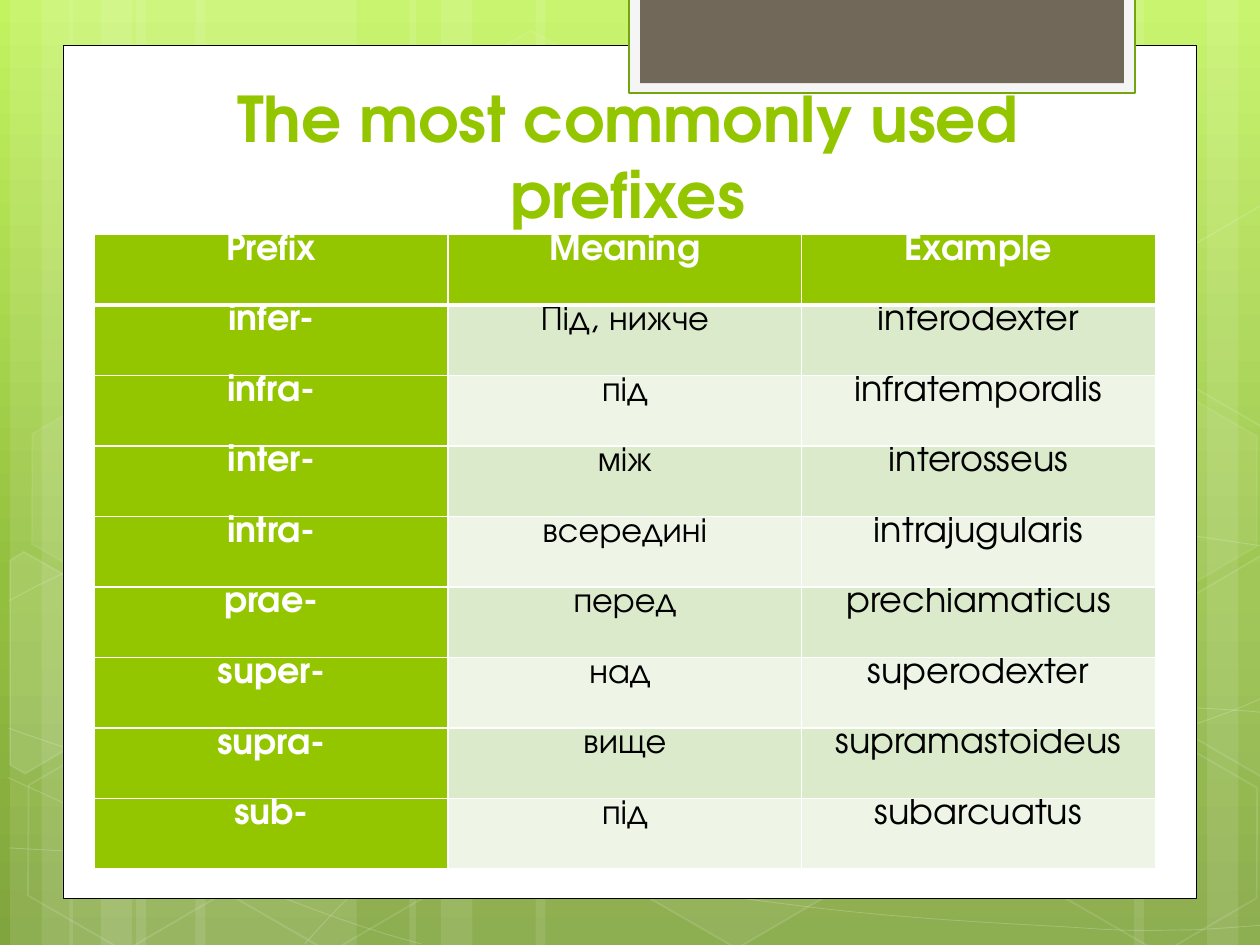
"""Build the slide that lists commonly used Latin prefixes."""
from copy import deepcopy
from dataclasses import dataclass
from typing import Optional

from lxml import etree
from pptx import Presentation
from pptx.dml.color import RGBColor
from pptx.enum.shapes import MSO_SHAPE
from pptx.enum.text import MSO_ANCHOR, PP_ALIGN
from pptx.oxml.ns import qn
from pptx.util import Inches, Pt

RECTANGLE, HEXAGON = MSO_SHAPE.RECTANGLE, MSO_SHAPE.HEXAGON
CENTER, BOTTOM, TOP = PP_ALIGN.CENTER, MSO_ANCHOR.BOTTOM, MSO_ANCHOR.TOP


@dataclass(frozen=True)
class Theme:
    font: str = "TeX Gyre Adventor"
    title_size: float = 36
    table_size: float = 20
    table_spacing: float = 18.5
    accent: str = "94C600"
    white: str = "FFFFFF"
    black: str = "000000"
    bands: tuple = ("DCEACC", "EEF5E7")
    gradient: tuple = ((0, "C3F35F"), (0.62, "93BF3F"), (1, "81A53E"))
    tab_fill: str = "F5F5F5"
    tab_line: str = "74A510"
    tab_inner: str = "71685A"


@dataclass(frozen=True)
class Paint:
    fill: Optional[str] = None
    fill_alpha: int = 100
    line: Optional[str] = None
    width: float = 1
    line_alpha: int = 100


@dataclass(frozen=True)
class Hexagon:
    left: float
    top: float
    fill_alpha: int
    line_alpha: int


@dataclass(frozen=True)
class Outline:
    points: tuple
    fill_alpha: int


THEME = Theme()
STRIPES = ((1.08, 1.75), (0.08, 0.5), (0.33, 0.83), (1.55, 1.75), (0.55, 0.5), (0.8, 0.83),
           (7.33, 1.75), (9.58, 0.5), (9, 0.83), (4.25, 3.08), (3.25, 0.5), (3.5, 0.83))
CURVES = (
    ((0.07, 6.73), (0.61, 6.76), (1.15, 6.79), (1.9, 6.78), (2.65, 6.77), (3.58, 6.75),
     (4.58, 6.65), (5.58, 6.55), (7, 6.36), (7.92, 6.17), (8.83, 5.98), (9.77, 5.68),
     (10.07, 5.51)),
    ((0.07, 4.77), (0.36, 4.61), (0.65, 4.46), (1.21, 4.31), (1.78, 4.16), (2.59, 3.94),
     (3.47, 3.87), (4.36, 3.8), (5.44, 3.79), (6.54, 3.87), (7.64, 3.95), (9.47, 4.26),
     (10.07, 4.34)),
    ((0.06, 6.17), (1.27, 6.72), (2.47, 7.27), (3.34, 7.49)),
    ((0.07, 5.78), (0.38, 5.89), (0.7, 6), (1.28, 6.16), (1.86, 6.31), (2.73, 6.56),
     (3.57, 6.73), (4.4, 6.9), (5.45, 7.08), (6.28, 7.18), (7.11, 7.29), (8, 7.33),
     (8.53, 7.36), (9.05, 7.4), (9.19, 7.38), (9.45, 7.38), (9.71, 7.37), (9.89, 7.35),
     (10.07, 7.34)),
    ((2.42, 7.49), (2.6, 7.29), (2.78, 7.09), (3.02, 6.91), (3.26, 6.73), (3.6, 6.53),
     (3.88, 6.39), (4.16, 6.25), (4.33, 6.19), (4.7, 6.09), (5.06, 5.99), (5.73, 5.85),
     (6.08, 5.78), (6.44, 5.71), (6.49, 5.71), (6.8, 5.69), (7.11, 5.66), (7.6, 5.63),
     (7.94, 5.62), (8.29, 5.61), (8.86, 5.62), (8.86, 5.62), (8.86, 5.62), (9.53, 5.62),
     (9.53, 5.62), (9.71, 5.63), (9.88, 5.64), (9.97, 5.65), (10.06, 5.66), (10.03, 5.65),
     (10.06, 5.66)),
)
HEXAGONS = (Hexagon(3.34, 0.36, 4, 8), Hexagon(4.97, 5.89, 6, 12), Hexagon(0.11, 5.91, 0, 12),
            Hexagon(0.14, 3.12, 7, 8), Hexagon(1.74, 5.92, 0, 12), Hexagon(7.53, 4.53, 10, 12),
            Hexagon(8.34, 5.93, 0, 12), Hexagon(8.34, 3.14, 7, 8))
CUT_HEXAGONS = (
    Outline(((0.08, 4.45), (0.19, 4.38), (0.96, 4.82), (0.95, 5.7), (0.2, 6.14), (0.08, 6.07)), 10),
    Outline(((9.26, 4.85), (10.01, 4.41), (10.09, 4.46), (10.09, 6.13), (10.02, 6.17),
             (9.26, 5.73)), 4),
    Outline(((9.26, 2.07), (10.01, 1.63), (10.1, 1.68), (10.09, 3.35), (10.02, 3.39),
             (9.26, 2.95)), 0),
)
ROWS = (
    ("Prefix", "Meaning", "Example"),
    ("infer-", "Під, нижче", "inferodexter"),
    ("infra-", "під", "infratemporalis"),
    ("inter-", "між", "interosseus"),
    ("intra-", "всередині", "intrajugularis"),
    ("prae-", "перед", "prechiamaticus"),
    ("super-", "над ", "superodexter"),
    ("supra-", "вище", "supramastoideus"),
    ("sub-", "під", "subarcuatus"),
)


def set_color(fill, color: str, alpha: int = 100) -> None:
    fill.solid()
    fill.fore_color.rgb = RGBColor.from_string(color)
    if alpha < 100:
        element = fill._xPr.find(qn("a:solidFill"))[0]
        etree.SubElement(element, qn("a:alpha"), val=str(alpha * 1000))


def apply_paint(shape, paint: Paint) -> None:
    shape.shadow.inherit = False
    if paint.fill and paint.fill_alpha:
        set_color(shape.fill, paint.fill, paint.fill_alpha)
    else:
        shape.fill.background()
    if paint.line:
        shape.line.width = Pt(paint.width)
        set_color(shape.line.fill, paint.line, paint.line_alpha)
    else:
        shape.line.fill.background()


def add_preset(slide, kind, left: float, top: float, width: float, height: float, paint: Paint):
    shape = slide.shapes.add_shape(kind, Inches(left), Inches(top), Inches(width), Inches(height))
    apply_paint(shape, paint)
    return shape


def add_outline(slide, points, closed: bool, paint: Paint):
    corners = [(Inches(x), Inches(y)) for x, y in points]
    builder = slide.shapes.build_freeform(*corners[0], scale=1.0)
    builder.add_line_segments(corners[1:], close=closed)
    shape = builder.convert_to_shape()
    apply_paint(shape, paint)
    return shape


def add_curve(slide, knots: tuple, paint: Paint) -> None:
    """Draw cubic segments; one whose controls sit on its ends stays a straight line."""
    shape = add_outline(slide, knots, False, paint)
    outline = shape._element.find(".//" + qn("a:path"))
    segments = outline.findall(qn("a:lnTo"))
    for start in range(0, len(segments), 3):
        first, second, last = segments[start:start + 3]
        if knots[start] == knots[start + 1] and knots[start + 2] == knots[start + 3]:
            outline.remove(first)
            outline.remove(second)
            continue
        curve = etree.Element(qn("a:cubicBezTo"))
        first.addprevious(curve)
        for segment in (first, second, last):
            curve.append(segment[0])
            outline.remove(segment)


def add_text(text_frame, text: str, size: float, color: str, bold: bool):
    paragraph = text_frame.paragraphs[0]
    paragraph.alignment = CENTER
    run = paragraph.add_run()
    run.text = text
    run.font.name, run.font.size, run.font.bold = THEME.font, Pt(size), bold
    run.font.color.rgb = RGBColor.from_string(color)
    return paragraph


def paint_background(slide) -> None:
    fill = slide.background.fill
    fill.gradient()
    fill.gradient_angle = 270
    stops = slide._element.find(".//" + qn("a:gsLst"))
    stops.insert(1, deepcopy(stops[0]))
    for stop, (position, color) in zip(fill.gradient_stops, THEME.gradient):
        stop.position = position
        stop.color.rgb = RGBColor.from_string(color)


def draw_backdrop(slide) -> None:
    white = THEME.white
    paint_background(slide)
    for left, width in STRIPES:
        add_preset(slide, RECTANGLE, left, 0, width, 7.5, Paint(white, 10))
    for knots in CURVES:
        add_curve(slide, knots, Paint(line=white, width=0.5, line_alpha=20))
    for item in HEXAGONS:
        shape = add_preset(slide, HEXAGON, item.left, item.top, 1.75, 1.52,
                           Paint(white, item.fill_alpha, white, 1, item.line_alpha))
        shape.rotation = 30
        shape.adjustments[0], shape.adjustments[1] = 0.285, 1.155
    for outline in CUT_HEXAGONS:
        add_outline(slide, outline.points, True, Paint(white, outline.fill_alpha, white, 1, 12))
    add_preset(slide, RECTANGLE, 0.5, 0.36, 9, 6.77, Paint(white, line=THEME.black, width=0.5))
    add_preset(slide, RECTANGLE, 4.99, -0.02, 4.02, 0.76,
               Paint(THEME.tab_fill, line=THEME.tab_line, width=1.25))
    add_preset(slide, RECTANGLE, 5.08, -0.02, 3.84, 0.68, Paint(THEME.tab_inner))


def add_title(slide) -> None:
    box = slide.shapes.add_textbox(Inches(1.14), Inches(0.99), Inches(7.68), Inches(0.89))
    box.text_frame.word_wrap = True
    box.text_frame.vertical_anchor = BOTTOM
    add_text(box.text_frame, "The most commonly used prefixes", THEME.title_size, THEME.accent, True)


def set_borders(cell, bottom: float, top: float) -> None:
    properties = cell._tc.get_or_add_tcPr()
    for index, (side, width) in enumerate((("L", 1), ("R", 1), ("T", top), ("B", bottom))):
        line = etree.Element(qn(f"a:ln{side}"), w=str(Pt(width)))
        fill = etree.SubElement(line, qn("a:solidFill"))
        etree.SubElement(fill, qn("a:srgbClr"), val=THEME.white)
        properties.insert(index, line)


def add_prefix_table(slide) -> None:
    table = slide.shapes.add_table(len(ROWS), len(ROWS[0]), Inches(0.75), Inches(1.86),
                                   Inches(8.42), Inches(5.04)).table
    for row_index, texts in enumerate(ROWS):
        for column_index, text in enumerate(texts):
            cell = table.cell(row_index, column_index)
            heading = row_index == 0 or column_index == 0
            cell.margin_left = cell.margin_right = Inches(0.07)
            cell.margin_top = cell.margin_bottom = 0
            cell.vertical_anchor = TOP
            set_color(cell.fill, THEME.accent if heading else THEME.bands[(row_index - 1) % 2])
            paragraph = add_text(cell.text_frame, text, THEME.table_size,
                                 THEME.white if heading else THEME.black, heading)
            paragraph.line_spacing = Pt(THEME.table_spacing)
            set_borders(cell, 3 if row_index == 0 else 1, 3 if row_index == 1 else 1)


def main() -> None:
    presentation = Presentation()
    presentation.slide_width, presentation.slide_height = Inches(10), Inches(7.5)
    slide = presentation.slides.add_slide(presentation.slide_layouts[6])
    draw_backdrop(slide)
    add_title(slide)
    add_prefix_table(slide)
    presentation.save("out.pptx")


if __name__ == "__main__":
    main()
